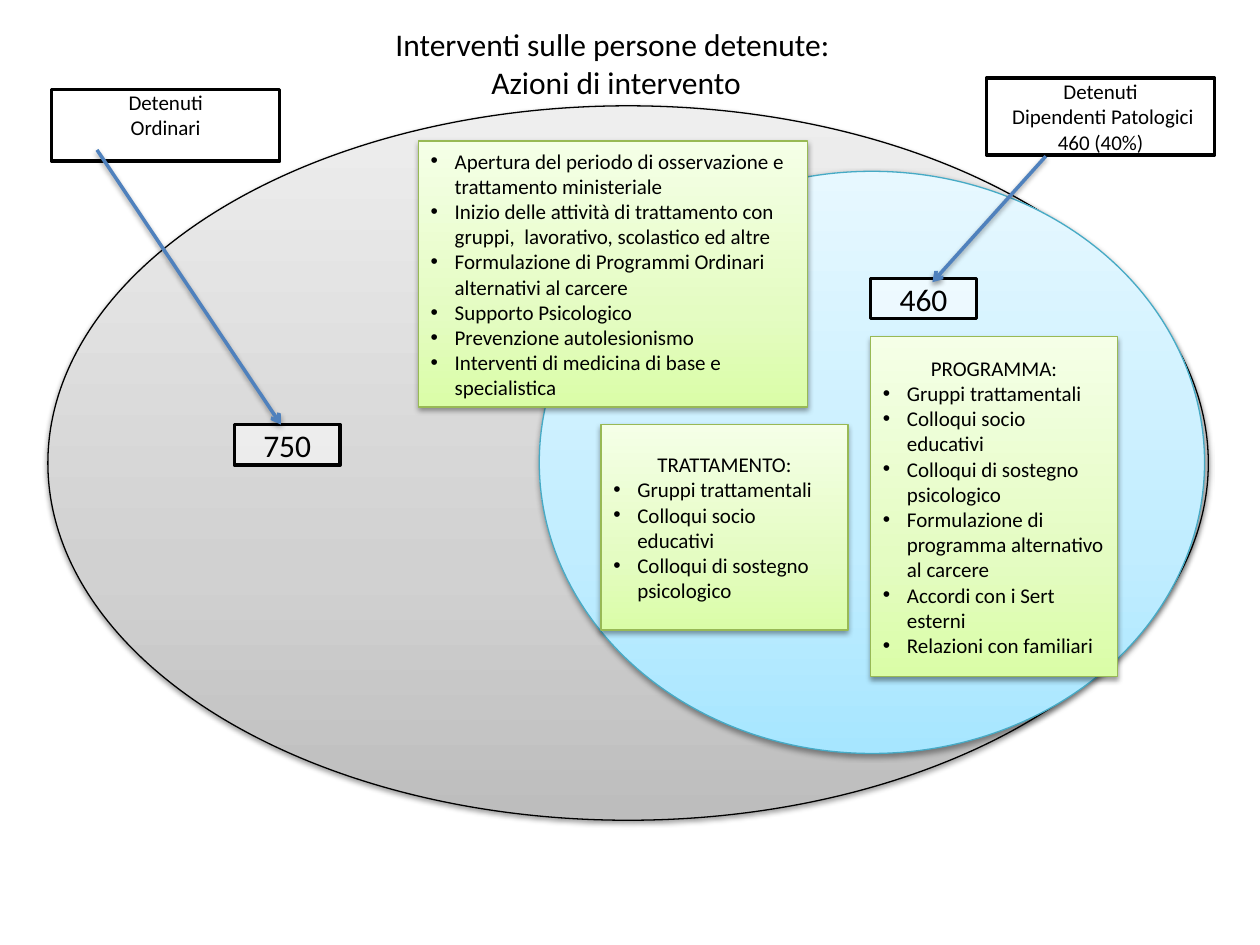
from pptx import Presentation
from pptx.dml.color import RGBColor
from pptx.enum.shapes import MSO_CONNECTOR, MSO_SHAPE
from pptx.enum.text import MSO_ANCHOR, MSO_AUTO_SIZE, PP_ALIGN
from pptx.oxml import parse_xml
from pptx.oxml.ns import nsdecls, qn
from pptx.util import Inches, Pt

OVAL, RECT = MSO_SHAPE.OVAL, MSO_SHAPE.RECTANGLE
STRAIGHT = MSO_CONNECTOR.STRAIGHT
TOP, MIDDLE = MSO_ANCHOR.TOP, MSO_ANCHOR.MIDDLE
FIT_SHAPE = MSO_AUTO_SIZE.SHAPE_TO_FIT_TEXT
LEFT, CENTER = PP_ALIGN.LEFT, PP_ALIGN.CENTER

THEME = {
    "font": "Calibri", "body": 12, "large": 18,
    "text": "000000", "paper": "FFFFFF", "arrow": "4F81BD",
    "thin": 0.75, "thick": 2, "indent": 0.19,
    # line colour, then gradient stops from bottom to top
    "grey": ("000000", ("BDBDBD", "D1D1D1", "EEEEEE")),
    "blue": ("46AAC5", ("A7E6FF", "C1EDFF", "E7F8FF")),
    "green": ("98B955", ("DAFDA7", "E4FCC2", "F5FFE7")),
}
STOPS = (0, 35, 100)

# Content; boxes are left, top, width, height
TITLE = "Interventi sulle persone detenute: \nAzioni di intervento"
TITLE_BOX = (2.38, 0.15, 5.02, 0.71)
GROUPS = [
    ((0.38, 0.84, 9.21, 5.67), "grey"),
    ((4.28, 1.36, 5.28, 4.62), "blue"),
]
LABELS = [
    ((0.41, 0.71, 1.81, 0.57), "Detenuti\nOrdinari", TOP),
    ((7.83, 0.62, 1.81, 0.61), "Detenuti\n Dipendenti Patologici 460 (40%)", MIDDLE),
]
COUNTS = [((1.86, 3.37, 0.84, 0.32), "750"), ((6.91, 2.21, 0.84, 0.32), "460")]
ARROWS = [(0.77, 1.19, 2.23, 3.37), (8.3, 1.24, 7.4, 2.24)]
SHARED = ["Gruppi trattamentali", "Colloqui socio educativi",
          "Colloqui di sostegno psicologico"]
CARDS = [
    ((3.32, 1.12, 3.09, 2.11), None, [
        "Apertura del periodo di osservazione e trattamento ministeriale",
        "Inizio delle attività di trattamento con gruppi,  lavorativo, scolastico ed altre",
        "Formulazione di Programmi Ordinari alternativi al carcere",
        "Supporto Psicologico",
        "Prevenzione autolesionismo",
        "Interventi di medicina di base e specialistica",
    ]),
    ((4.77, 3.37, 1.96, 1.63), "TRATTAMENTO:", SHARED),
    ((6.91, 2.67, 1.96, 2.7), "PROGRAMMA:", SHARED + [
        "Formulazione di programma alternativo al carcere",
        "Accordi con i Sert esterni",
        "Relazioni con familiari",
    ]),
]


def rgb(name):
    return RGBColor.from_string(THEME[name])


def add_shadow(spPr):
    for old in spPr.findall(qn("a:effectLst")):
        spPr.remove(old)
    spPr.append(parse_xml(
        f'<a:effectLst {nsdecls("a")}><a:outerShdw blurRad="{Pt(3.1)}" dist="{Pt(1.6)}" '
        'dir="5400000" rotWithShape="0"><a:srgbClr val="000000"><a:alpha val="38000"/>'
        '</a:srgbClr></a:outerShdw></a:effectLst>'))


def add_gradient_shape(slide, kind, box, style):
    line, colors = THEME[style]
    sp = slide.shapes.add_shape(kind, *map(Inches, box))
    sp.fill.gradient()
    sp.fill.gradient_angle = 90
    stops = "".join(f'<a:gs pos="{pos * 1000}"><a:srgbClr val="{color}"/></a:gs>'
                    for pos, color in zip(STOPS, colors))
    grad = sp._element.spPr.find(qn("a:gradFill"))
    grad.replace(grad.find(qn("a:gsLst")),
                 parse_xml(f'<a:gsLst {nsdecls("a")}>{stops}</a:gsLst>'))
    sp.line.color.rgb = RGBColor.from_string(line)
    sp.line.width = Pt(THEME["thin"])
    add_shadow(sp._element.spPr)
    return sp


def add_outlined_box(slide, box, text, size, alpha=100, anchor=MIDDLE):
    sp = slide.shapes.add_shape(RECT, *map(Inches, box))
    sp.shadow.inherit = False
    sp.fill.solid()
    sp.fill.fore_color.rgb = rgb("paper")
    if alpha < 100:
        color = sp._element.spPr.find(qn("a:solidFill")).find(qn("a:srgbClr"))
        color.append(parse_xml(f'<a:alpha {nsdecls("a")} val="{alpha * 1000}"/>'))
    sp.line.color.rgb = rgb("text")
    sp.line.width = Pt(THEME["thick"])
    write(sp.text_frame, text, size, anchor)
    if anchor == TOP:
        sp.text_frame.margin_top = 0


def write(tf, text, size, anchor=MIDDLE):
    tf.text = text
    tf.word_wrap = True
    tf.vertical_anchor = anchor
    for p in tf.paragraphs:
        p.alignment = CENTER
        for r in p.runs:
            r.font.name = THEME["font"]
            r.font.size = Pt(THEME[size])
            r.font.color.rgb = rgb("text")


def add_bullet(p):
    p.alignment = LEFT
    pPr = p._p.get_or_add_pPr()
    indent = Inches(THEME["indent"])
    pPr.set("marL", str(indent))
    pPr.set("indent", str(-indent))
    pPr.append(parse_xml(f'<a:buFont {nsdecls("a")} typeface="Arial"/>'))
    pPr.append(parse_xml(f'<a:buChar {nsdecls("a")} char="•"/>'))


def add_card(slide, box, heading, items):
    sp = add_gradient_shape(slide, RECT, box, "green")
    lines = ([heading] if heading else []) + items
    write(sp.text_frame, "\n".join(lines), "body")
    for p in sp.text_frame.paragraphs[-len(items):]:
        add_bullet(p)


def add_arrow(slide, ends):
    line = slide.shapes.add_connector(STRAIGHT, *map(Inches, ends))
    line.line.color.rgb = rgb("arrow")
    line.line.width = Pt(THEME["thick"])
    spPr = line._element.spPr
    spPr.find(qn("a:ln")).append(parse_xml(f'<a:tailEnd {nsdecls("a")} type="arrow"/>'))
    add_shadow(spPr)


def main():
    prs = Presentation()
    prs.slide_width, prs.slide_height = Inches(10), Inches(7.5)
    slide = prs.slides.add_slide(prs.slide_layouts[5])

    # Title
    title = slide.shapes.title
    title.left, title.top, title.width, title.height = map(Inches, TITLE_BOX)
    write(title.text_frame, TITLE, "large", TOP)
    title.text_frame.auto_size = FIT_SHAPE

    # Nested populations with their labels and counts
    for box, style in GROUPS:
        add_gradient_shape(slide, OVAL, box, style)
    for box, text, anchor in LABELS:
        add_outlined_box(slide, box, text, "body", anchor=anchor)
    for box, text in COUNTS:
        add_outlined_box(slide, box, text, "large", alpha=53)

    # Arrows from labels to counts
    for ends in ARROWS:
        add_arrow(slide, ends)

    # Intervention lists
    for card in CARDS:
        add_card(slide, *card)

    prs.save("out.pptx")


if __name__ == "__main__":
    main()
